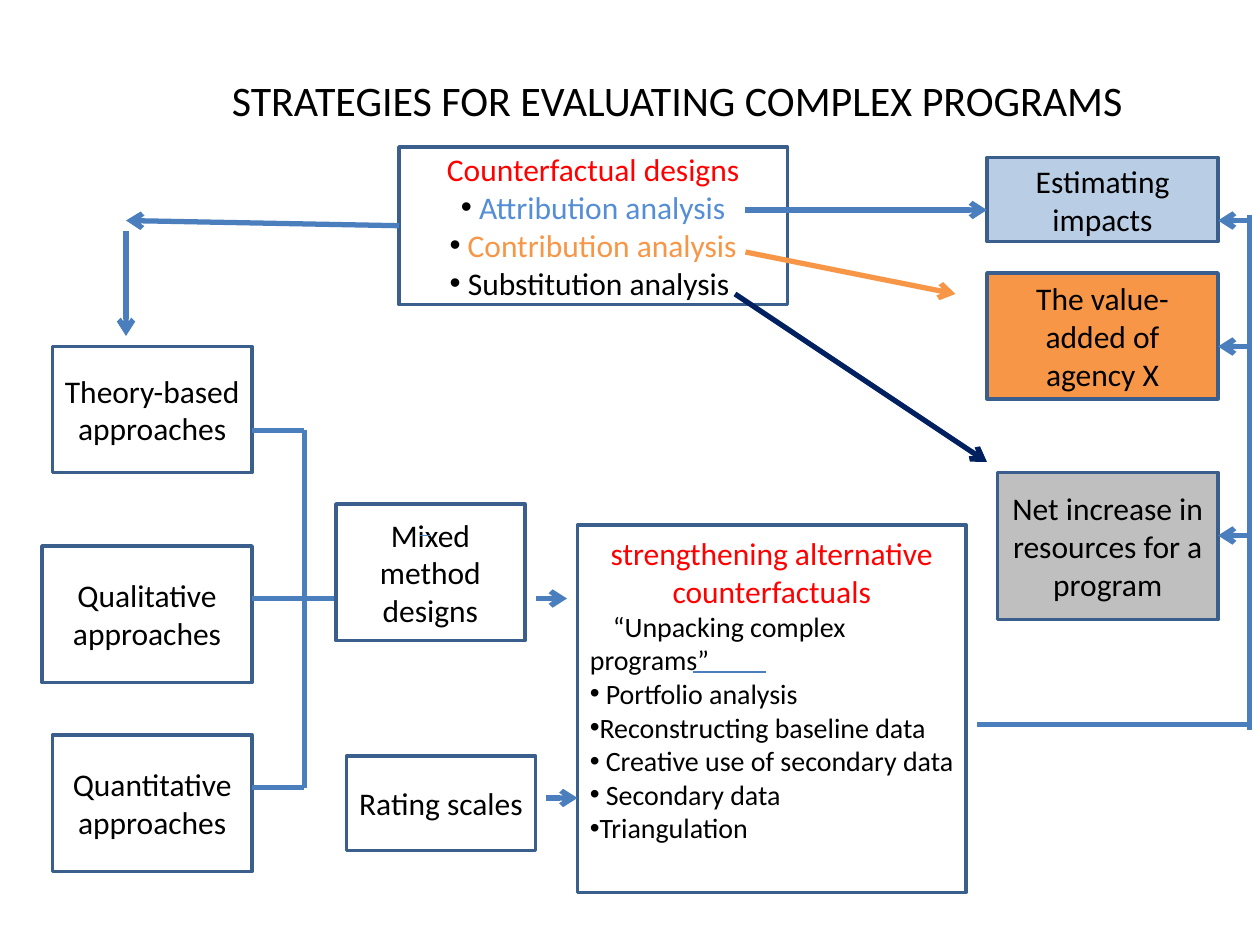
import dataclasses

import lxml.etree
import pptx
import pptx.dml.color
import pptx.enum.shapes
import pptx.enum.text
import pptx.oxml.ns
import pptx.util

ALIGN = pptx.enum.text.PP_ALIGN
UNITS_PER_INCH = 12


@dataclasses.dataclass(frozen=True)
class Theme:
    font: str = "Calibri"
    title_size: int = 24
    body_size: int = 18
    list_size: int = 16
    box_line: float = 2
    arrow_line: float = 3
    thin_line: float = 0.75
    text: str = "000000"
    white: str = "FFFFFF"
    outline: str = "3A5F8C"
    connector: str = "4B7EBC"
    heading: str = "FF0000"
    attribution: str = "558ED5"
    contribution: str = "F79646"
    substitution: str = "002060"
    impacts: str = "B9CDE5"
    resources: str = "BFBFBF"


THEME = Theme()


@dataclasses.dataclass(frozen=True)
class Region:
    """A part of the slide whose contents are placed in grid units from its corner."""
    slide: object
    left: float
    top: float

    def point(self, column, row):
        return (grid(self.left + column), grid(self.top + row))


def grid(units):
    return pptx.util.Inches(units / UNITS_PER_INCH)


def color(value):
    return pptx.dml.color.RGBColor.from_string(value)


def add_text(frame, text, size=THEME.body_size, ink=THEME.text,
             align=ALIGN.CENTER, bullet=False, bullet_ink=None, first_indent=0):
    """Add one paragraph, reusing the empty one of a new frame."""
    paragraph = frame.paragraphs[0]
    if paragraph.runs:
        paragraph = frame.add_paragraph()
    paragraph.alignment = align
    run = paragraph.add_run()
    run.text = text
    run.font.name = THEME.font
    run.font.size = pptx.util.Pt(size)
    run.font.color.rgb = color(ink)
    properties = paragraph._p.get_or_add_pPr()
    properties.set("marL", "0")
    properties.set("indent", str(grid(first_indent)))
    if bullet:
        qualified = pptx.oxml.ns.qn
        bullet_color = lxml.etree.SubElement(properties, qualified("a:buClr"))
        lxml.etree.SubElement(bullet_color, qualified("a:srgbClr"), val=bullet_ink or ink)
        lxml.etree.SubElement(properties, qualified("a:buFont"), typeface="Arial")
        lxml.etree.SubElement(properties, qualified("a:buChar"), char="•")


def add_box(region, column, row, width, height, text=None, fill=THEME.white,
            outline=THEME.outline, **text_format):
    shape = region.slide.shapes.add_shape(
        pptx.enum.shapes.MSO_SHAPE.RECTANGLE,
        *region.point(column, row), grid(width), grid(height))
    shape.shadow.inherit = False
    shape.fill.solid()
    shape.fill.fore_color.rgb = color(fill)
    if outline:
        shape.line.color.rgb = color(outline)
        shape.line.width = pptx.util.Pt(THEME.box_line)
    else:
        shape.line.fill.background()
    frame = shape.text_frame
    frame.word_wrap = True
    frame.vertical_anchor = pptx.enum.text.MSO_ANCHOR.MIDDLE
    if text:
        add_text(frame, text, **text_format)
    return frame


def add_line(region, start, end, ink=THEME.connector, width=THEME.arrow_line, arrow=False):
    connector = region.slide.shapes.add_connector(
        pptx.enum.shapes.MSO_CONNECTOR.STRAIGHT, *region.point(*start), *region.point(*end))
    connector.line.color.rgb = color(ink)
    connector.line.width = pptx.util.Pt(width)
    if arrow:
        lxml.etree.SubElement(connector.line._get_or_add_ln(),
                              pptx.oxml.ns.qn("a:tailEnd"), type="arrow")
    lxml.etree.SubElement(connector._element.spPr, pptx.oxml.ns.qn("a:effectLst"))


def add_title(region):
    add_box(region, 0, 0, 99, 9, "STRATEGIES FOR EVALUATING COMPLEX PROGRAMS",
            outline=None, size=THEME.title_size)


def add_approaches(region):
    """Three approaches joined by a bracket that leads to the mixed methods."""
    add_box(region, 1, 0, 19, 12, "Theory-based approaches")
    add_box(region, 0, 19, 20, 13, "Qualitative approaches")
    add_box(region, 1, 37, 19, 13, "Quantitative approaches")
    add_line(region, (25, 8), (25, 42))
    for row, column in ((8, 25), (24, 28), (42, 25)):
        add_line(region, (column, row), (20, row))


def add_alternatives(region):
    """Mixed methods and rating scales feeding the alternative counterfactuals."""
    add_box(region, 0, 0, 18, 13, "Mixed method designs")
    add_box(region, 1, 24, 18, 9, "Rating scales")
    frame = add_box(region, 23, 2, 37, 35, "strengthening alternative counterfactuals",
                    ink=THEME.heading)
    frame.margin_bottom = pptx.util.Inches(0.36)
    list_format = {"size": THEME.list_size, "align": ALIGN.LEFT}
    add_text(frame, "“Unpacking complex programs”", first_indent=2.2, **list_format)
    for item in (" Portfolio analysis", "Reconstructing baseline data",
                 " Creative use of secondary data", " Secondary data", "Triangulation"):
        add_text(frame, item, bullet=True, **list_format)
    add_line(region, (34, 16), (41, 16), width=THEME.thin_line)
    add_line(region, (9, 3), (8, 3), width=THEME.thin_line)
    add_line(region, (19, 9), (22, 9), arrow=True)
    add_line(region, (20, 28), (23, 28), arrow=True)


def add_outcomes(region):
    """Three outcomes fed from a shared rail on the right."""
    add_box(region, 1, 0, 22, 8, "Estimating impacts", fill=THEME.impacts)
    add_box(region, 1, 11, 22, 12, "The value-added of agency X", fill=THEME.contribution)
    add_box(region, 2, 30, 21, 14, "Net increase in resources for a program",
            fill=THEME.resources)
    add_line(region, (0, 54), (26, 54))
    add_line(region, (26, 54.5), (26, 5.5))
    for row in (6, 18, 36):
        add_line(region, (26, row), (23, row), arrow=True)


def add_counterfactual_designs(region):
    """The designs, with arrows to the outcomes and to the approaches."""
    frame = add_box(region, 0, 0, 37, 15, "Counterfactual designs", ink=THEME.heading)
    for item, ink in ((" Attribution analysis", THEME.attribution),
                      (" Contribution analysis", THEME.contribution),
                      (" Substitution analysis ", THEME.text)):
        add_text(frame, item, ink=ink, bullet=True, bullet_ink=THEME.text)
    for start, end, ink in (((33, 6), (56, 6), THEME.connector),
                            ((33, 10), (53, 14), THEME.contribution),
                            ((32, 14), (56, 30), THEME.substitution),
                            ((0, 7.5), (-26, 7), THEME.connector),
                            ((-26, 8), (-26, 18), THEME.connector)):
        add_line(region, start, end, ink=ink, arrow=True)


def main():
    presentation = pptx.Presentation()
    presentation.slide_width = grid(120)
    presentation.slide_height = grid(90)
    slide = presentation.slides.add_slide(presentation.slide_layouts[6])
    add_title(Region(slide, 15, 5))
    add_approaches(Region(slide, 4, 33))
    add_alternatives(Region(slide, 32, 48))
    add_outcomes(Region(slide, 93, 15))
    add_counterfactual_designs(Region(slide, 38, 14))
    presentation.save("out.pptx")


if __name__ == "__main__":
    main()
